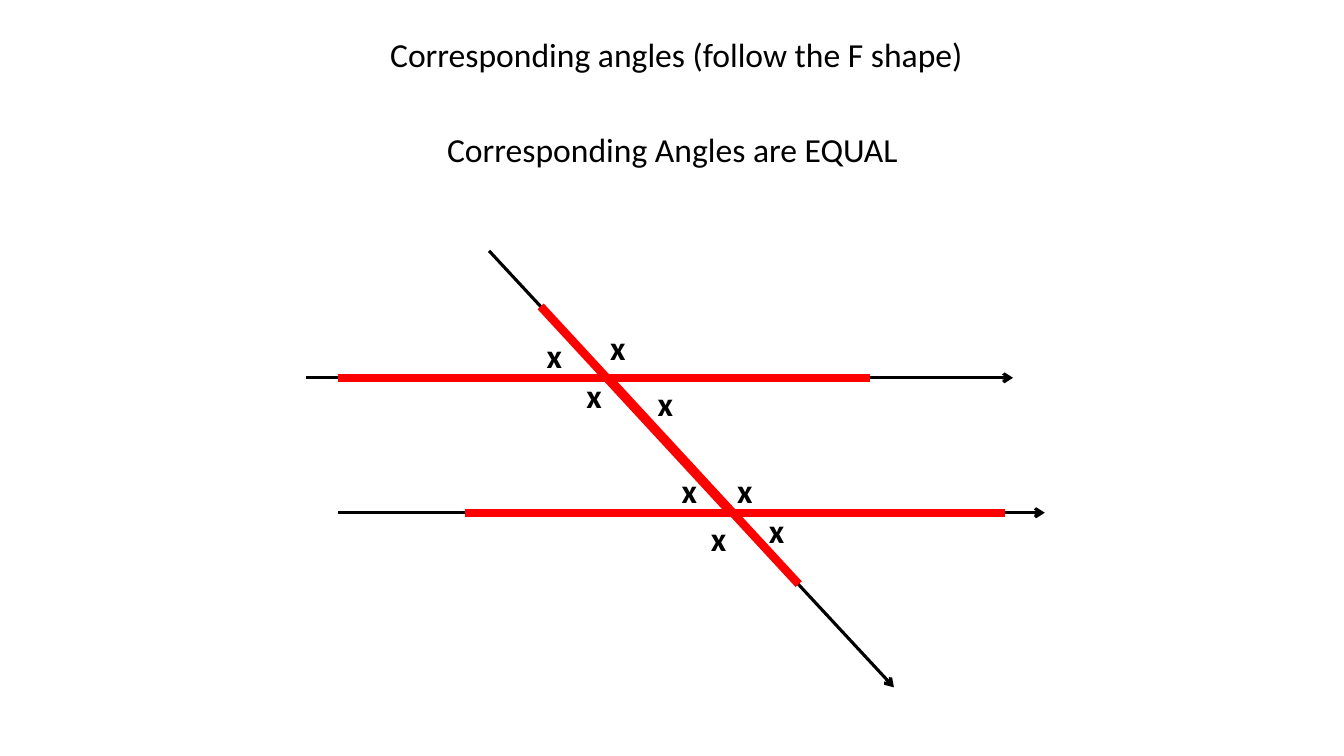
from lxml.etree import SubElement
from pptx import Presentation
from pptx.dml.color import RGBColor
from pptx.enum.shapes import MSO_CONNECTOR
from pptx.enum.text import MSO_AUTO_SIZE, PP_ALIGN
from pptx.oxml.ns import qn
from pptx.util import Inches, Mm, Pt

CELL = Mm(2)  # one column or row of the grid
BLACK, RED = "000000", "FF0000"

# Ends of each line, in cells from the corner of the diagram
RAYS = [(4, 33, 93, 33), (0, 16, 89, 16), (23, 0, 74, 55)]
UPPER_F = [(62, 42, 38, 16), (71, 16, 37, 16), (38, 16, 4, 16)]
LOWER_F = [(88, 33, 54, 33), (54, 33, 20, 33), (53.5, 33, 29.5, 7)]
# Corner of each angle mark
MARKS = [(49.7, 33), (34, 15), (43, 16), (37, 9),
         (29, 10), (46, 27), (53, 27), (57, 32)]


def color(code):
    return RGBColor.from_string(code)


def write(slide, text, left, top, width, height=6.35, bold=False,
          wrap=True, align=PP_ALIGN.LEFT, size=24):
    """Add a text box; lengths are in cells."""
    box = slide.shapes.add_textbox(
        *(round(n * CELL) for n in (left, top, width, height)))
    frame = box.text_frame
    frame.word_wrap = wrap
    frame.auto_size = MSO_AUTO_SIZE.SHAPE_TO_FIT_TEXT
    para = frame.paragraphs[0]
    para.alignment = align
    run = para.add_run()
    run.text = text
    font = run.font
    font.name, font.size, font.bold = "Calibri", Pt(size), bold
    font.color.rgb = color(BLACK)


def stroke(slide, ends, shade, width, arrow=False):
    """Add a straight line; ends are in cells."""
    line = slide.shapes.add_connector(
        MSO_CONNECTOR.STRAIGHT, *(round(n * CELL) for n in ends))
    line.line.color.rgb = color(shade)
    line.line.width = Pt(width)
    if arrow:
        SubElement(line.line._get_or_add_ln(), qn("a:tailEnd"), type="arrow")
    SubElement(line._element.spPr, qn("a:effectLst"))


def head(slide, left, top, width, text):
    write(slide, text, left, top, width, align=PP_ALIGN.CENTER)


def angles(slide, left, top):
    def shift(ends):
        x1, y1, x2, y2 = ends
        return left + x1, top + y1, left + x2, top + y2

    # Parallel lines and the line across them
    for ends in RAYS:
        stroke(slide, shift(ends), BLACK, 2.25, arrow=True)
    # The two F shapes
    for ends in UPPER_F + LOWER_F:
        stroke(slide, shift(ends), RED, 6)
    # Angle marks
    for x, y in MARKS:
        write(slide, "x", left + x, top + y, 4.3, bold=True, wrap=False)


def main():
    deck = Presentation()
    deck.slide_width, deck.slide_height = Inches(13.33), Inches(7.5)
    slide = deck.slides.add_slide(deck.slide_layouts[6])
    angles(slide, 38.6, 31.6)
    head(slide, 27.7, 3.7, 115, "Corresponding angles (follow the F shape)")
    head(slide, 26.7, 15.6, 116, "Corresponding Angles are EQUAL")
    deck.save("out.pptx")


if __name__ == "__main__":
    main()
